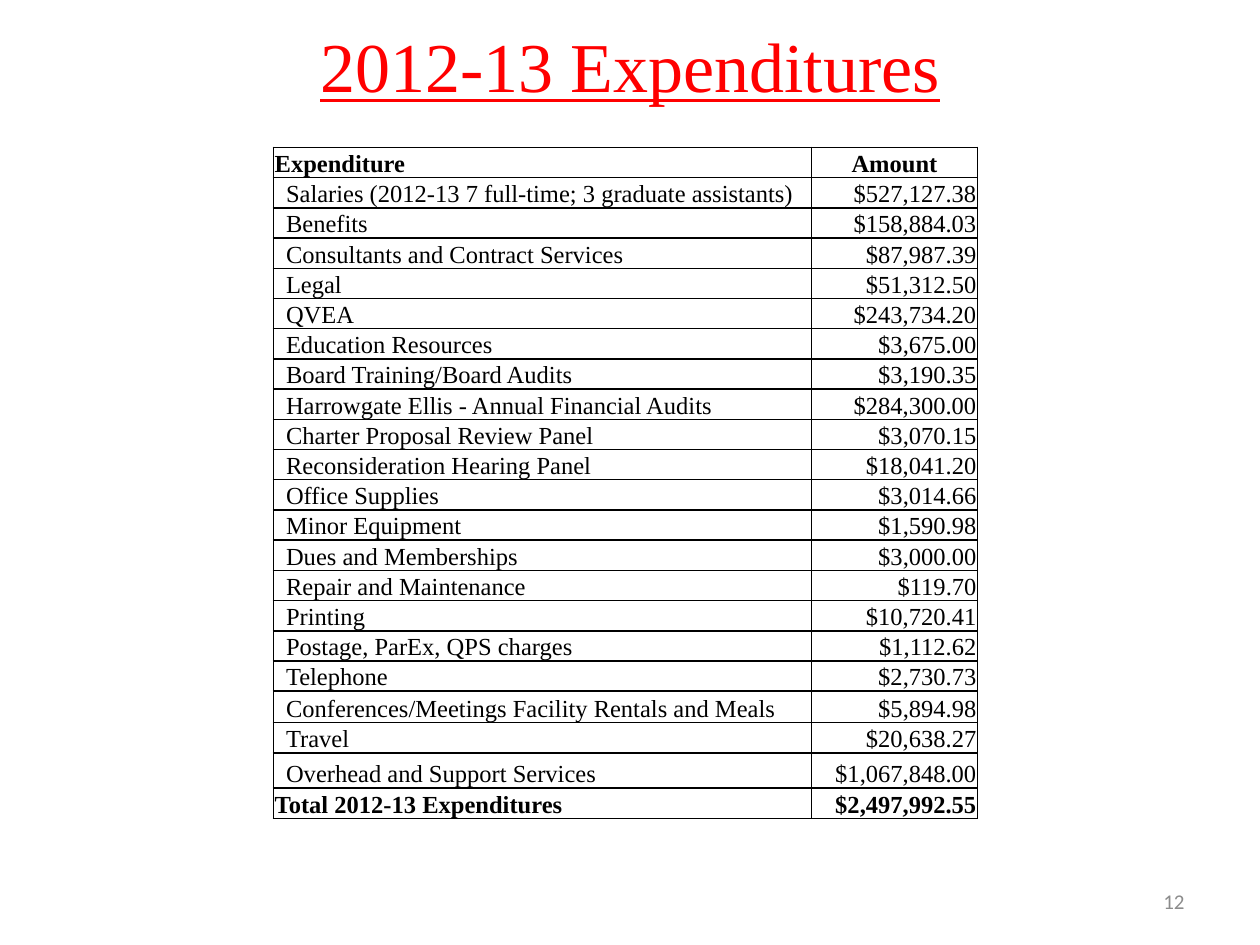
import dataclasses

import lxml.etree
import pptx
import pptx.dml.color
import pptx.enum.text
import pptx.oxml.ns
import pptx.util

Inches = pptx.util.Inches
Align = pptx.enum.text.PP_ALIGN
Anchor = pptx.enum.text.MSO_ANCHOR


@dataclasses.dataclass(frozen=True)
class Theme:
    serif: str = "Times New Roman"
    sans: str = "Calibri"
    title_color: str = "FF0000"
    text_color: str = "000000"
    number_color: str = "8C8C8C"
    cell_color: str = "FFFFFF"
    border_color: str = "000000"
    title_size: int = 40
    table_size: int = 14
    number_size: int = 12
    border_width: int = 1


EXPENDITURES = [
    ("Salaries (2012-13 7 full-time; 3 graduate assistants)", "$527,127.38"),
    ("Benefits", "$158,884.03"),
    ("Consultants and Contract Services", "$87,987.39"),
    ("Legal", "$51,312.50"),
    ("QVEA", "$243,734.20"),
    ("Education Resources", "$3,675.00"),
    ("Board Training/Board Audits", "$3,190.35"),
    ("Harrowgate Ellis - Annual Financial Audits", "$284,300.00"),
    ("Charter Proposal Review Panel", "$3,070.15"),
    ("Reconsideration Hearing Panel", "$18,041.20"),
    ("Office Supplies", "$3,014.66"),
    ("Minor Equipment", "$1,590.98"),
    ("Dues and Memberships", "$3,000.00"),
    ("Repair and Maintenance", "$119.70"),
    ("Printing", "$10,720.41"),
    ("Postage, ParEx, QPS charges", "$1,112.62"),
    ("Telephone", "$2,730.73"),
    ("Conferences/Meetings Facility Rentals and Meals", "$5,894.98"),
    ("Travel", "$20,638.27"),
    ("Overhead and Support Services", "$1,067,848.00"),
]
HEADER = ("Expenditure", "Amount")
TOTAL = ("Total 2012-13 Expenditures", "$2,497,992.55")

COLUMN_WIDTHS = (4.27, 1.32)
ROW_HEIGHT = 0.24
TALL_ROWS = {18: 0.25, 20: 0.28}


class SlideBuilder:
    def __init__(self, slide, theme):
        self.slide = slide
        self.theme = theme

    def add_text(self, frame, text, size, color, font, align, bold=False, underline=False):
        paragraph = frame.paragraphs[0]
        paragraph.alignment = align
        run = paragraph.add_run()
        run.text = text
        run.font.name = font
        run.font.size = pptx.util.Pt(size)
        run.font.bold = bold
        run.font.underline = underline
        run.font.color.rgb = pptx.dml.color.RGBColor.from_string(color)

    def title(self, text, left, top, width, height):
        heading = self.slide.shapes.title
        heading.left, heading.top = Inches(left), Inches(top)
        heading.width, heading.height = Inches(width), Inches(height)
        heading.text_frame.vertical_anchor = Anchor.MIDDLE
        self.add_text(heading.text_frame, text, self.theme.title_size,
                      self.theme.title_color, self.theme.serif, Align.CENTER,
                      underline=True)

    def page_number(self, text, left, top, width, height):
        number = self.slide.shapes.add_textbox(
            Inches(left), Inches(top), Inches(width), Inches(height))
        number.text_frame.word_wrap = True
        number.text_frame.vertical_anchor = Anchor.MIDDLE
        self.add_text(number.text_frame, text, self.theme.number_size,
                      self.theme.number_color, self.theme.sans, Align.RIGHT)

    def borders(self, cell):
        properties = cell._tc.get_or_add_tcPr()
        qn = pptx.oxml.ns.qn
        for position, side in enumerate(("a:lnL", "a:lnR", "a:lnT", "a:lnB")):
            line = lxml.etree.Element(
                qn(side), w=str(pptx.util.Pt(self.theme.border_width)))
            fill = lxml.etree.SubElement(line, qn("a:solidFill"))
            lxml.etree.SubElement(fill, qn("a:srgbClr"), val=self.theme.border_color)
            properties.insert(position, line)

    def cell(self, cell, text, align, bold, indent):
        cell.margin_left = Inches(indent)
        cell.margin_right = cell.margin_top = Inches(0.01)
        cell.margin_bottom = 0
        cell.vertical_anchor = Anchor.BOTTOM
        cell.fill.solid()
        cell.fill.fore_color.rgb = pptx.dml.color.RGBColor.from_string(self.theme.cell_color)
        self.borders(cell)
        self.add_text(cell.text_frame, text, self.theme.table_size,
                      self.theme.text_color, self.theme.serif, align, bold)

    def table(self, rows, left, top):
        heights = [TALL_ROWS.get(index, ROW_HEIGHT) for index in range(len(rows))]
        ledger = self.slide.shapes.add_table(
            len(rows), len(COLUMN_WIDTHS), Inches(left), Inches(top),
            Inches(sum(COLUMN_WIDTHS)), Inches(sum(heights))).table
        ledger.first_row = ledger.horz_banding = False
        for column, width in zip(ledger.columns, COLUMN_WIDTHS):
            column.width = Inches(width)
        for index, (label, amount) in enumerate(rows):
            ledger.rows[index].height = Inches(heights[index])
            is_header = index == 0
            is_bold = is_header or index == len(rows) - 1
            self.cell(ledger.cell(index, 0), label, Align.LEFT, is_bold,
                      0.01 if is_bold else 0.1)
            self.cell(ledger.cell(index, 1), amount,
                      Align.CENTER if is_header else Align.RIGHT, is_bold, 0.01)


def main():
    deck = pptx.Presentation()
    deck.slide_width, deck.slide_height = Inches(10), Inches(7.5)
    title_only = deck.slide_layouts[5]
    builder = SlideBuilder(deck.slides.add_slide(title_only), Theme())

    # Heading
    builder.title("2012-13 Expenditures", 0.5, 0.08, 9, 0.87)
    # Expenditure table with header and total
    builder.table([HEADER, *EXPENDITURES, TOTAL], 2.17, 1.17)
    # Page number
    builder.page_number("12", 7.17, 6.95, 2.33, 0.4)

    deck.save("out.pptx")


if __name__ == "__main__":
    main()
